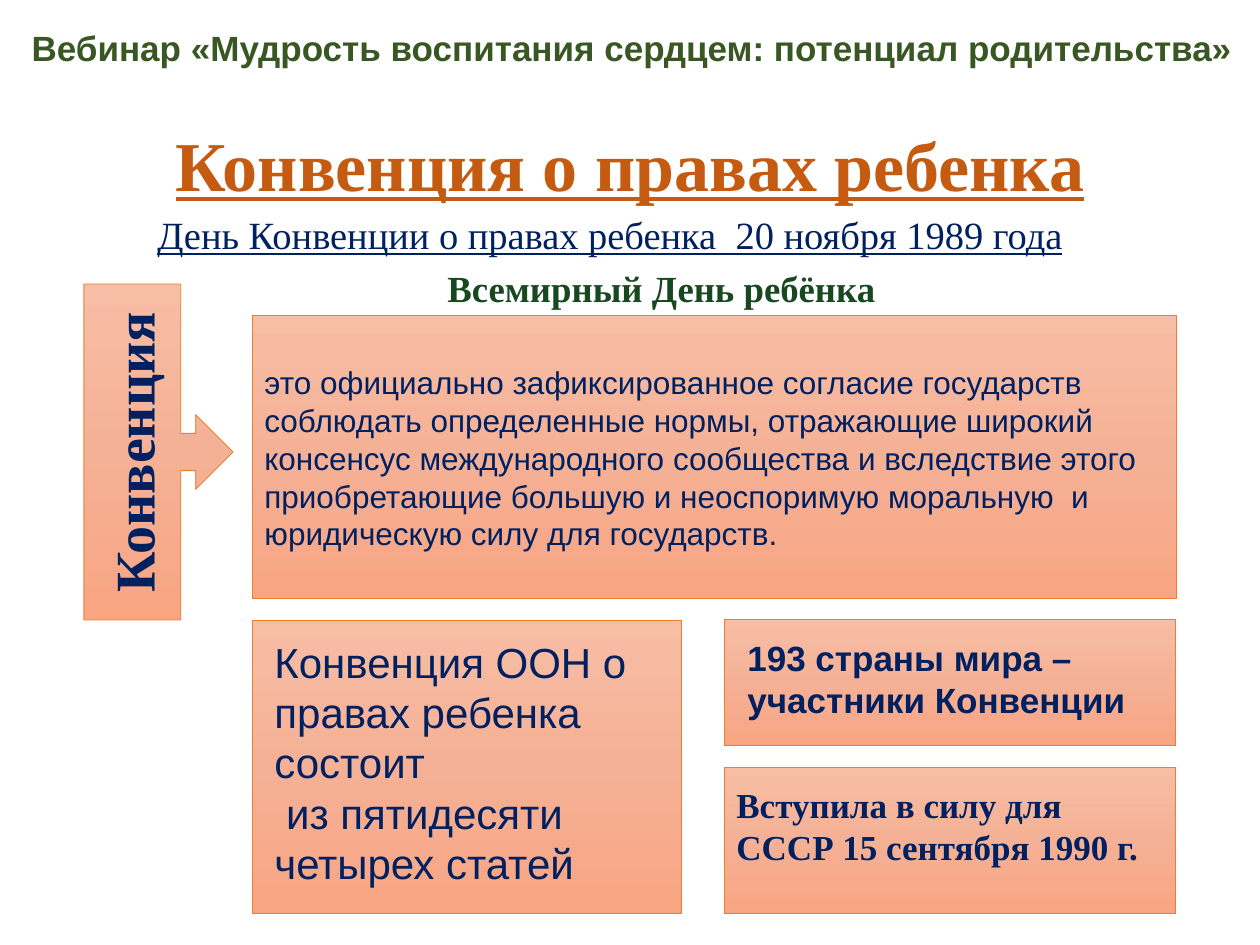
from copy import deepcopy

from pptx import Presentation
from pptx.dml.color import RGBColor
from pptx.enum.shapes import MSO_SHAPE
from pptx.enum.text import MSO_ANCHOR, PP_ALIGN
from pptx.oxml.ns import qn
from pptx.util import Pt

PX = 914400 / 126
RECT = MSO_SHAPE.RECTANGLE
CALLOUT = MSO_SHAPE.RIGHT_ARROW_CALLOUT
MIDDLE = MSO_ANCHOR.MIDDLE
LEFT, CENTER = PP_ALIGN.LEFT, PP_ALIGN.CENTER
SANS, SERIF = "Arial", "Times New Roman"
NAVY, GREEN, OLIVE = "002060", "184820", "385723"
RUST, ORANGE = "C55A11", "ED7D31"
PEACH = ["F7BDA5", "F5B196", "F8A582"]


def px(*nums):
    return [round(n * PX) for n in nums]


def rgb(code):
    return RGBColor.from_string(code)


def style(para, text, size, font=SANS, color=NAVY, bold=False, line=False, align=LEFT):
    para.text = text
    para.alignment = align
    face = para.font
    face.name, face.size, face.bold, face.underline = font, Pt(size), bold, line
    face.color.rgb = rgb(color)


def label(slide, box, lines, size, **look):
    """Text box with one paragraph per line; returns its frame."""
    frame = slide.shapes.add_textbox(*px(*box)).text_frame
    frame.word_wrap = True
    for i, text in enumerate(lines):
        para = frame.add_paragraph() if i else frame.paragraphs[0]
        style(para, text, size, **look)
    return frame


def panel(slide, box, kind=RECT):
    """Peach gradient shape with a thin orange outline."""
    shape = slide.shapes.add_shape(kind, *px(*box))
    shape.shadow.inherit = False
    shape.line.color.rgb = rgb(ORANGE)
    shape.line.width = Pt(0.5)
    fill = shape.fill
    fill.gradient()
    fill.gradient_angle = 270
    stops = shape._element.spPr.find(qn("a:gradFill")).find(qn("a:gsLst"))
    stops.insert(1, deepcopy(stops[0]))
    for i, stop in enumerate(fill.gradient_stops):
        stop.position = i / 2
        stop.color.rgb = rgb(PEACH[i])
    return shape


def heading(slide, x, y, w):
    label(slide, (x, y, w, 55),
          ["Вебинар «Мудрость воспитания сердцем: потенциал родительства»"],
          20, color=OLIVE, bold=True, align=CENTER)
    title = label(slide, (x + 69, y + 52, w - 142, 183), ["Конвенция о правах ребенка"],
                  40, font=SERIF, color=RUST, bold=True, line=True, align=CENTER)
    title.vertical_anchor = MIDDLE
    dates = label(slide, (x + 127, y + 190, w - 195, 105),
                  ["День Конвенции о правах ребенка  20 ноября 1989 года"],
                  22, font=SERIF, line=True)
    style(dates.add_paragraph(), "Всемирный День ребёнка", 21,
          font=SERIF, color=GREEN, bold=True, align=CENTER)
    for para in dates.paragraphs:
        para.line_spacing = 0.9
        para.space_before = Pt(7.5)


def term(slide, box):
    """Upright callout naming the term."""
    frame = panel(slide, box, CALLOUT).text_frame
    frame.vertical_anchor = MIDDLE
    frame._txBody.bodyPr.set("vert", "vert270")
    style(frame.paragraphs[0], "Конвенция", 32, font=SERIF, bold=True, align=CENTER)


def meaning(slide, x, y, w, h):
    panel(slide, (x, y, w, h))
    label(slide, (x, y + 42, w, h - 80),
          ["это официально зафиксированное согласие государств соблюдать "
           "определенные нормы, отражающие широкий консенсус международного "
           "сообщества и вследствие этого приобретающие большую и неоспоримую "
           "моральную  и юридическую силу для государств."], 18)


def facts(slide, x, y, w, h):
    """One tall panel on the left, two stacked on the right."""
    gap, tall, top = 42, 430, 126
    right, low = x + tall + gap, y + top + gap // 2
    side = w - tall - gap
    panel(slide, (x, y, tall, h))
    label(slide, (x + 10, y + 10, tall - 31, h - 27),
          ["Конвенция ООН о правах ребенка состоит", " из пятидесяти четырех статей"], 24)
    panel(slide, (right, y, side, top))
    label(slide, (right + 11, y + 10, side - 21, 97),
          ["193 страны мира –", "участники Конвенции"], 20, bold=True)
    panel(slide, (right, low, side, y + h - low))
    label(slide, (right, low + 10, side, 97),
          ["Вступила в силу для", "СССР 15 сентября 1990 г."], 20, font=SERIF, bold=True)


def main():
    deck = Presentation()
    deck.slide_width, deck.slide_height = px(1260, 945)
    slide = deck.slides.add_slide(deck.slide_layouts[6])
    term(slide, (84, 284, 149, 336))
    meaning(slide, 252, 315, 924, 284)
    facts(slide, 252, 620, 924, 294)
    heading(slide, 18, 20, 1228)
    deck.save("out.pptx")


if __name__ == "__main__":
    main()
